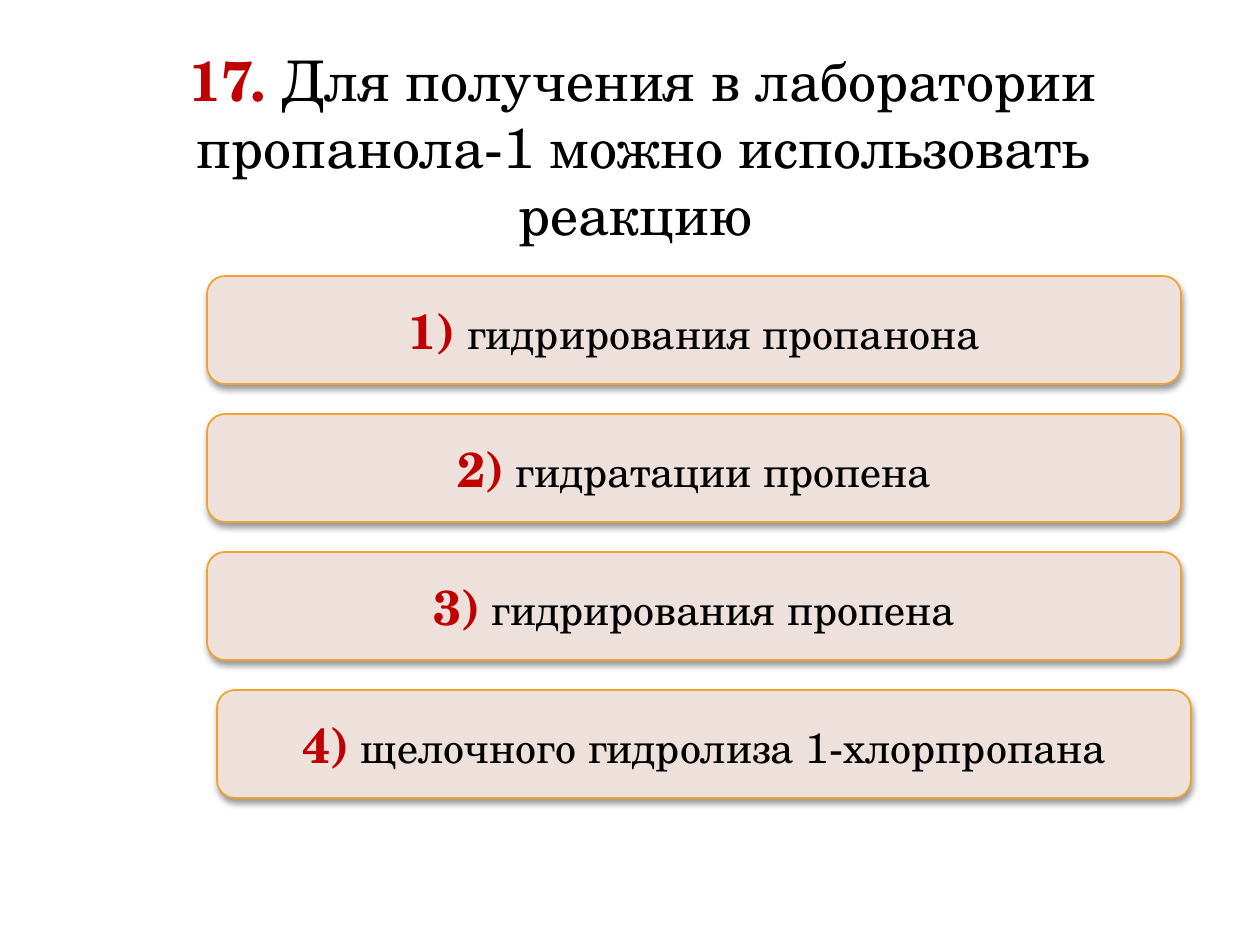
"""Builds a chemistry quiz slide with a question and four answer choices."""
from dataclasses import dataclass

from lxml.etree import SubElement
from pptx import Presentation
from pptx.dml.color import RGBColor
from pptx.enum.shapes import MSO_SHAPE as Shape
from pptx.enum.text import MSO_ANCHOR as Anchor, PP_ALIGN as Align
from pptx.oxml.ns import qn
from pptx.util import Emu, Pt

PX = 914400 / 126


def px(length):
    return Emu(round(length * PX))


@dataclass(frozen=True)
class Theme:
    font: str = "TeX Gyre Schola"
    number: str = "C00000"
    ink: str = "000000"
    card: str = "EEE0DB"
    border: str = "F0A22E"
    shadow: str = "000000"
    question_size: int = 32
    number_size: int = 28
    answer_size: int = 24


class QuizSlide:
    def __init__(self, slide, theme):
        self.slide = slide
        self.theme = theme

    def numbered_text(self, frame, number, wording, number_size, wording_size):
        frame.word_wrap = True
        line = frame.paragraphs[0]
        line.alignment = Align.CENTER
        parts = (
            (number, number_size, self.theme.number, True),
            (f" {wording}", wording_size, self.theme.ink, False),
        )
        for text, size, color, bold in parts:
            run = line.add_run()
            run.text = text
            run.font.name = self.theme.font
            run.font.size = Pt(size)
            run.font.bold = bold
            run.font.color.rgb = RGBColor.from_string(color)

    def question(self, left, top, width, height, number, wording):
        box = self.slide.shapes.add_textbox(px(left), px(top), px(width), px(height))
        size = self.theme.question_size
        self.numbered_text(box.text_frame, number, wording, size, size)

    def answer(self, left, top, width, height, number, wording):
        card = self.slide.shapes.add_shape(
            Shape.ROUNDED_RECTANGLE, px(left), px(top), px(width), px(height))
        card.fill.solid()
        card.fill.fore_color.rgb = RGBColor.from_string(self.theme.card)
        card.line.color.rgb = RGBColor.from_string(self.theme.border)
        card.line.width = Pt(1)
        self.drop_shadow(card)
        card.text_frame.vertical_anchor = Anchor.MIDDLE
        self.numbered_text(card.text_frame, number, wording,
                           self.theme.number_size, self.theme.answer_size)

    def drop_shadow(self, card):
        card.shadow.inherit = False
        effects = card._element.spPr.find(qn("a:effectLst"))
        shadow = SubElement(effects, qn("a:outerShdw"), blurRad=str(Pt(4)),
                            dist=str(Pt(2)), dir="5400000", rotWithShape="0")
        color = SubElement(shadow, qn("a:srgbClr"), val=self.theme.shadow)
        SubElement(color, qn("a:alpha"), val="40000")


def main():
    deck = Presentation()
    deck.slide_width, deck.slide_height = px(1260), px(945)
    quiz = QuizSlide(deck.slides.add_slide(deck.slide_layouts[6]), Theme())

    quiz.question(137, 39, 1012, 285, "17.",
                  "Для получения в лаборатории пропанола-1 можно использовать реакцию ")

    first_top, pitch = 276, 138
    answers = (
        (207, "гидрирования пропанона"),
        (207, "гидратации пропена"),
        (207, "гидрирования пропена"),
        (217, "щелочного гидролиза 1-хлорпропана"),
    )
    for row, (left, wording) in enumerate(answers):
        quiz.answer(left, first_top + row * pitch, 974, 108, f"{row + 1})", wording)

    deck.save("out.pptx")


if __name__ == "__main__":
    main()
